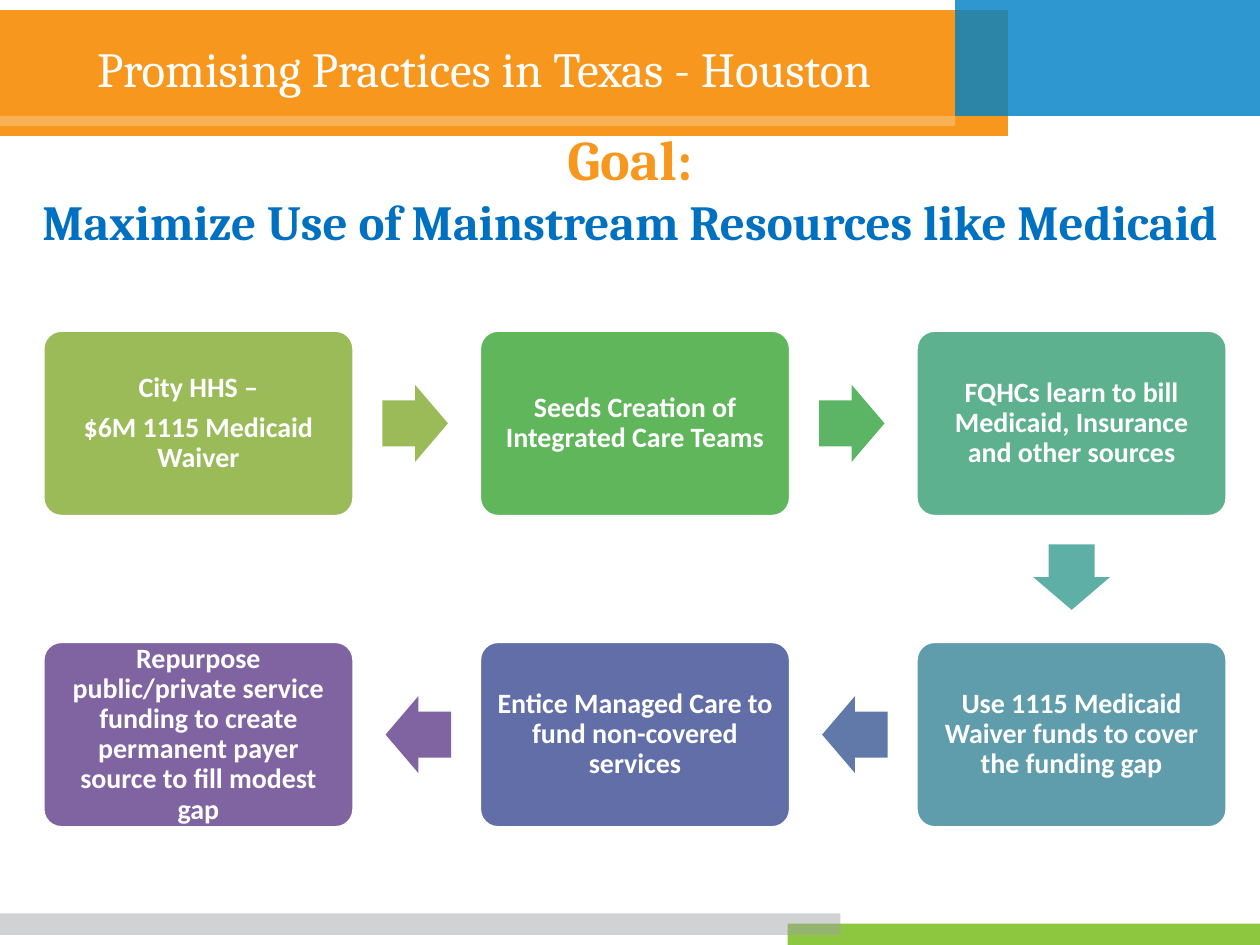
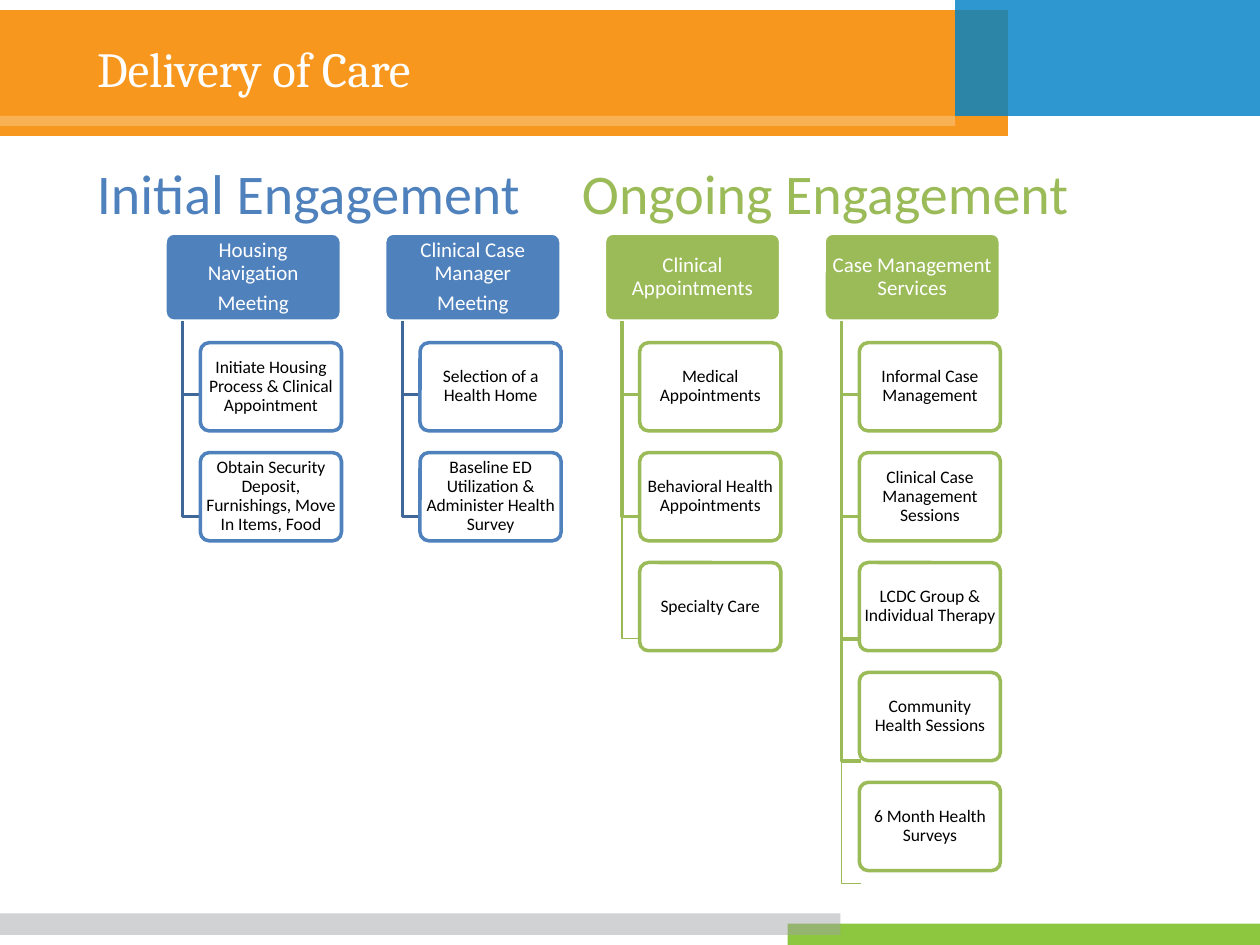
from lxml.etree import SubElement
from pptx import Presentation
from pptx.dml.color import RGBColor
from pptx.enum.shapes import MSO_SHAPE as Shape
from pptx.enum.text import MSO_ANCHOR as Anchor, MSO_AUTO_SIZE as AutoSize, PP_ALIGN as Align
from pptx.oxml.ns import qn
from pptx.util import Inches, Pt

WHITE, BLACK, ORANGE, BLUE, GREEN = "FFFFFF", "000000", "F8971D", "4F81BD", "9BBB59"

BANDS = [
    ((0, 0.08, 8, 1), ORANGE, 100),
    ((7.58, 0, 2.42, 0.92), "0081C6", 82),
    ((6.25, 7.33, 3.75, 0.17), "8DC63F", 100),
    ((0, 7.25, 6.67, 0.17), "9FA1A4", 48),
    ((0, 0.92, 7.58, 0.08), WHITE, 25),
]

HOUSTON_TITLE = "Promising Practices in Texas - Houston"
GOAL = [
    ("Goal:", 32, ORANGE),
    ("Maximize Use of Mainstream Resources like Medicaid", 28, "0070C0"),
]
STEPS = [
    (0, 0, GREEN, ["City HHS –", "$6M 1115 Medicaid Waiver"]),
    (1, 0, "5FB65B", ["Seeds Creation of Integrated Care Teams"]),
    (2, 0, "5DB18E", ["FQHCs learn to bill Medicaid, Insurance and other sources"]),
    (2, 1, "5F9DAC", ["Use 1115 Medicaid Waiver funds to cover the funding gap"]),
    (1, 1, "626EA7", ["Entice Managed Care to fund non-covered services"]),
    (0, 1, "8064A2", ["Repurpose public/private service funding to create "
                      "permanent payer source to fill modest gap"]),
]
ARROWS = [(0, GREEN), (0, "5CB565"), (90, "5EAFA6"), (180, "6179A8"), (180, "8064A2")]
ARROW_OFFSETS = {0: (1.72, 0), 90: (0, 1.22), 180: (-1.72, 0)}
STEP_LEFT, STEP_TOP, STEP_WIDTH, STEP_HEIGHT = 0.34, 2.62, 2.47, 1.48
STEP_ACROSS, STEP_DOWN = 6.93 / 2, 2.47
ARROW_LENGTH, ARROW_BREADTH = 0.52, 0.61

CARE_TITLE = "Delivery of Care"
PHASES = [("Initial Engagement", 0.67, BLUE), ("Ongoing Engagement", 4.52, GREEN)]
NAVY_HOOK, GREEN_HOOK = ("3F6797", 2), (GREEN, 2)
CARE_COLUMNS = [
    (["Housing Navigation", "Meeting"], BLUE, NAVY_HOOK, NAVY_HOOK,
     ["Initiate Housing Process & Clinical Appointment",
      "Obtain Security Deposit, Furnishings, Move In Items, Food"]),
    (["Clinical Case Manager", "Meeting"], BLUE, NAVY_HOOK, NAVY_HOOK,
     ["Selection of a Health Home", "Baseline ED Utilization & Administer Health Survey"]),
    (["Clinical Appointments"], GREEN, GREEN_HOOK, ("98B955", 0.75),
     ["Medical Appointments", "Behavioral Health Appointments", "Specialty Care"]),
    (["Case Management Services"], GREEN, GREEN_HOOK, (GREEN, 0.75),
     ["Informal Case Management", "Clinical Case Management Sessions",
      "LCDC Group & Individual Therapy", "Community Health Sessions",
      "6 Month Health Surveys"]),
]
COLUMN_LEFT, COLUMN_STEP = 1.31, 5.23 / 3
HEADER_TOP, HEADER_WIDTH, CARE_HEIGHT = 1.85, 1.4, 0.7
ITEM_INDENT, ITEM_TOP, ITEM_WIDTH, ITEM_STEP = 0.28, 2.72, 1.12, 3.49 / 4
HOOK_INDENT, HOOK_WIDTH, HOOK_TOP, HOOK_STEP = 0.14, 0.15, 3.13, 0.97


def rgb(colour):
    return RGBColor.from_string(colour)


def add_run(paragraph, text, size, colour, font="Calibri", bold=False):
    run = paragraph.add_run()
    run.text = text
    run.font.name, run.font.size, run.font.bold = font, Pt(size), bold
    run.font.color.rgb = rgb(colour)


def add_shape(slide, kind, box, fill, line=None, opacity=100):
    shape = slide.shapes.add_shape(kind, *map(Inches, box))
    shape.shadow.inherit = False
    shape.fill.solid()
    shape.fill.fore_color.rgb = rgb(fill)
    if opacity < 100:
        colour = shape.element.spPr.find(".//" + qn("a:srgbClr"))
        SubElement(colour, qn("a:alpha")).set("val", str(opacity * 1000))
    if line:
        shape.line.color.rgb = rgb(line)
        shape.line.width = Pt(2)
    else:
        shape.line.fill.background()
    return shape


def add_card(slide, box, fill, line, texts, size, colour, insets, bold=False):
    card = add_shape(slide, Shape.ROUNDED_RECTANGLE, box, fill, line)
    card.adjustments[0] = 0.1
    frame = card.text_frame
    frame.word_wrap, frame.vertical_anchor = True, Anchor.MIDDLE
    frame.margin_left = frame.margin_right = Inches(insets[0])
    frame.margin_top = frame.margin_bottom = Inches(insets[1])
    for index, text in enumerate(texts):
        paragraph = frame.add_paragraph() if index else frame.paragraphs[0]
        paragraph.alignment, paragraph.line_spacing = Align.CENTER, 0.9
        paragraph.space_after = Pt(size * 0.35)
        add_run(paragraph, text, size, colour, bold=bold)


def add_text_frame(slide, box):
    frame = slide.shapes.add_textbox(*map(Inches, box)).text_frame
    frame.word_wrap = True
    return frame


def add_titled_slide(presentation, text):
    slide = presentation.slides.add_slide(presentation.slide_layouts[5])
    title = slide.shapes.title
    title.left, title.top, title.width, title.height = map(Inches, (0.67, 0.25, 6.58, 0.58))
    frame = title.text_frame
    frame.word_wrap, frame.auto_size, frame.vertical_anchor = True, AutoSize.NONE, Anchor.MIDDLE
    frame.paragraphs[0].alignment = Align.LEFT
    add_run(frame.paragraphs[0], text, 28, WHITE, "Cambria")
    return slide


def move_bands_to_layout(slide):
    for index, (box, colour, opacity) in enumerate(BANDS):
        band = add_shape(slide, Shape.RECTANGLE, box, colour, opacity=opacity)
        slide.slide_layout.shapes.element.insert(2 + index, band.element)


def add_step_cycle(slide):
    for index, (column, row, colour, texts) in enumerate(STEPS):
        left, top = STEP_LEFT + column * STEP_ACROSS, STEP_TOP + row * STEP_DOWN
        add_card(slide, (left, top, STEP_WIDTH, STEP_HEIGHT), colour, WHITE,
                 texts, 16, WHITE, (0.07, 0.07), bold=True)
        if index < len(ARROWS):
            rotation, arrow_colour = ARROWS[index]
            across, down = ARROW_OFFSETS[rotation]
            box = (left + (STEP_WIDTH - ARROW_LENGTH) / 2 + across,
                   top + (STEP_HEIGHT - ARROW_BREADTH) / 2 + down,
                   ARROW_LENGTH, ARROW_BREADTH)
            arrow = add_shape(slide, Shape.RIGHT_ARROW, box, arrow_colour)
            arrow.adjustments[0], arrow.adjustments[1] = 0.6, 0.5
            arrow.rotation = rotation


def add_hook(slide, left, bottom, colour, width):
    top = HEADER_TOP + CARE_HEIGHT
    builder = slide.shapes.build_freeform(Inches(left), Inches(top))
    corners = [(left, bottom), (left + HOOK_WIDTH, bottom)]
    builder.add_line_segments([(Inches(x), Inches(y)) for x, y in corners], close=False)
    hook = builder.convert_to_shape()
    hook.shadow.inherit = False
    hook.fill.background()
    hook.line.color.rgb = rgb(colour)
    hook.line.width = Pt(width)


def add_care_columns(slide):
    for column, (header, colour, hook, last_hook, items) in enumerate(CARE_COLUMNS):
        left = COLUMN_LEFT + column * COLUMN_STEP
        add_card(slide, (left, HEADER_TOP, HEADER_WIDTH, CARE_HEIGHT), colour, WHITE,
                 header, 12, WHITE, (0.03, 0.02))
        for row, item in enumerate(items):
            style = last_hook if row == len(items) - 1 else hook
            add_hook(slide, left + HOOK_INDENT, HOOK_TOP + row * HOOK_STEP, *style)
            box = (left + ITEM_INDENT, ITEM_TOP + row * ITEM_STEP, ITEM_WIDTH, CARE_HEIGHT)
            add_card(slide, box, WHITE, colour, [item], 10, BLACK, (0.02, 0.01))


def main():
    presentation = Presentation()
    presentation.slide_width, presentation.slide_height = Inches(10), Inches(7.5)

    houston = add_titled_slide(presentation, HOUSTON_TITLE)
    move_bands_to_layout(houston)
    frame = add_text_frame(houston, (0, 0.94, 10, 1.58))
    for index, (text, size, colour) in enumerate(GOAL):
        paragraph = frame.add_paragraph() if index else frame.paragraphs[0]
        paragraph.alignment = Align.CENTER
        add_run(paragraph, text, size, colour, "Cambria", bold=True)
    add_step_cycle(houston)

    care = add_titled_slide(presentation, CARE_TITLE)
    add_care_columns(care)
    for text, left, colour in PHASES:
        frame = add_text_frame(care, (left, 1.21, 5.62, 0.64))
        add_run(frame.paragraphs[0], text, 32, colour)

    presentation.save("out.pptx")


if __name__ == "__main__":
    main()
